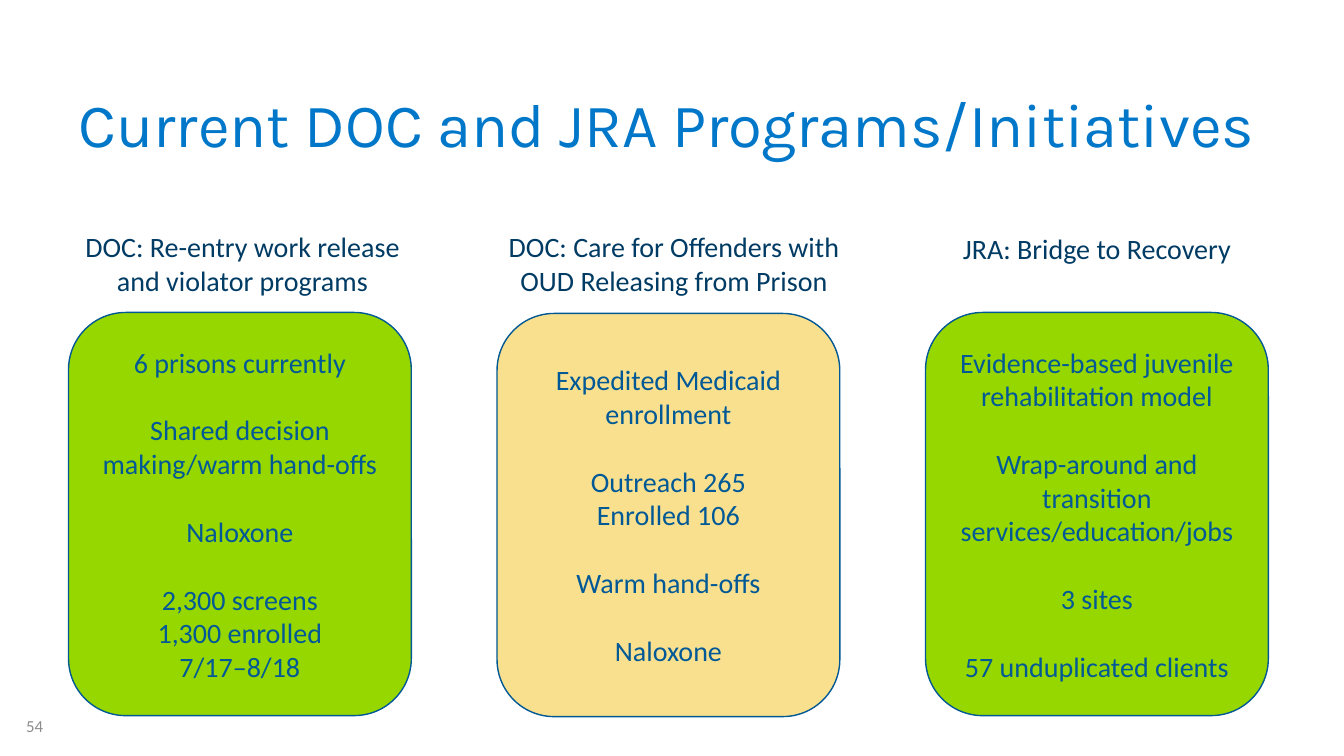
"""Build the slide on current DOC and JRA programs."""
from dataclasses import dataclass
from typing import Any

from pptx import Presentation
from pptx.dml.color import RGBColor
from pptx.enum.shapes import MSO_SHAPE
from pptx.enum.text import MSO_ANCHOR, MSO_AUTO_SIZE, PP_ALIGN
from pptx.util import Emu, Pt

SCALE = 9144
ROUND = MSO_SHAPE.ROUNDED_RECTANGLE
MIDDLE, TOP = MSO_ANCHOR.MIDDLE, MSO_ANCHOR.TOP
LEFT, CENTER = PP_ALIGN.LEFT, PP_ALIGN.CENTER
FIXED, GROW = MSO_AUTO_SIZE.NONE, MSO_AUTO_SIZE.SHAPE_TO_FIT_TEXT
GAP = Pt(24.4)
LIME, SAND = "97D700", "F8E08E"

Box = tuple[int, int, int, int]
Blocks = tuple[tuple[str, ...], ...]


@dataclass(frozen=True)
class Style:
    """Describe the type of a text."""
    size: int
    color: str
    face: str = "Calibri"
    align: Any = CENTER
    spacing: float = 1.0


@dataclass(frozen=True)
class Program:
    """Describe one program with its heading and card."""
    head: tuple[str, ...]
    place: Box
    top: int
    fill: str
    blocks: Blocks


TITLE = Style(44, "0077C8", "Karla", LEFT, 0.9)
NUMBER = Style(12, "8C8C8C", align=LEFT)
HEAD = Style(20, "003B64")
BODY = Style(20, "005996")

PROGRAMS = (
    Program(
        ("DOC: Re-entry work release", "and violator programs"),
        (73, 223, 335, 77), 310, LIME,
        (("6 prisons currently",),
         ("Shared decision making/warm hand-offs",),
         ("Naloxone",),
         ("2,300 screens", "1,300 enrolled", "7/17–8/18"))),
    Program(
        ("DOC: Care for Offenders with", "OUD Releasing from Prison"),
        (493, 223, 351, 77), 311, SAND,
        (("Expedited Medicaid enrollment",),
         ("Outreach 265", "Enrolled 106"),
         ("Warm hand-offs",),
         ("Naloxone",))),
    Program(
        ("JRA: Bridge to Recovery",),
        (944, 225, 288, 44), 310, LIME,
        (("Evidence-based juvenile rehabilitation model",),
         ("Wrap-around and transition services/education/jobs",),
         ("3 sites",),
         ("57 unduplicated clients",))),
)


def px(value: int) -> Emu:
    """Turn px into EMU."""
    return Emu(value * SCALE)


def paint(color: Any, value: str) -> None:
    """Set a colour format from a hex string."""
    color.rgb = RGBColor.from_string(value)


def apply(target: Any, values: dict[str, Any]) -> None:
    """Set each attribute named in the values."""
    for name, value in values.items():
        setattr(target, name, value)


def write(shape: Any, blocks: Blocks, style: Style, **frame: Any) -> None:
    """Fill a shape with blocks of lines, a gap between blocks."""
    text = shape.text_frame
    apply(text, {"word_wrap": True, "auto_size": FIXED,
                 "vertical_anchor": MIDDLE} | frame)
    lines = [(line, GAP if block and not row else Pt(0))
             for block, group in enumerate(blocks)
             for row, line in enumerate(group)]
    for index, (line, before) in enumerate(lines):
        para = text.add_paragraph() if index else text.paragraphs[0]
        apply(para, {"alignment": style.align, "space_before": before,
                     "line_spacing": style.spacing})
        run = para.add_run()
        run.text = line
        apply(run.font, {"size": Pt(style.size), "name": style.face})
        paint(run.font.color, style.color)


def draw(slide: Any, item: Program, left: int) -> None:
    """Draw a program's card and the heading above it."""
    card = slide.shapes.add_shape(ROUND, *map(px, (left, item.top, 340, 400)))
    card.shadow.inherit = False
    card.fill.solid()
    paint(card.fill.fore_color, item.fill)
    paint(card.line.color, "005894")
    card.line.width = Pt(1)
    write(card, item.blocks, BODY)
    head = slide.shapes.add_textbox(*map(px, item.place))
    write(head, (item.head,), HEAD, word_wrap=False, auto_size=GROW,
          vertical_anchor=TOP)


def main() -> None:
    """Build and save the slide."""
    deck = Presentation()
    apply(deck, {"slide_width": px(1333), "slide_height": px(750)})
    slide = deck.slides.add_slide(deck.slide_layouts[5])
    title = slide.shapes.title
    apply(title, {"left": px(68), "top": px(69),
                  "width": px(1191), "height": px(116)})
    write(title, (("Current DOC and JRA Programs/Initiatives",),), TITLE)
    number = slide.shapes.add_textbox(*map(px, (16, 711, 101, 18)))
    write(number, (("54",),), NUMBER)
    for index, item in enumerate(PROGRAMS):
        draw(slide, item, 68 + 425 * index)
    deck.save("out.pptx")


if __name__ == "__main__":
    main()
